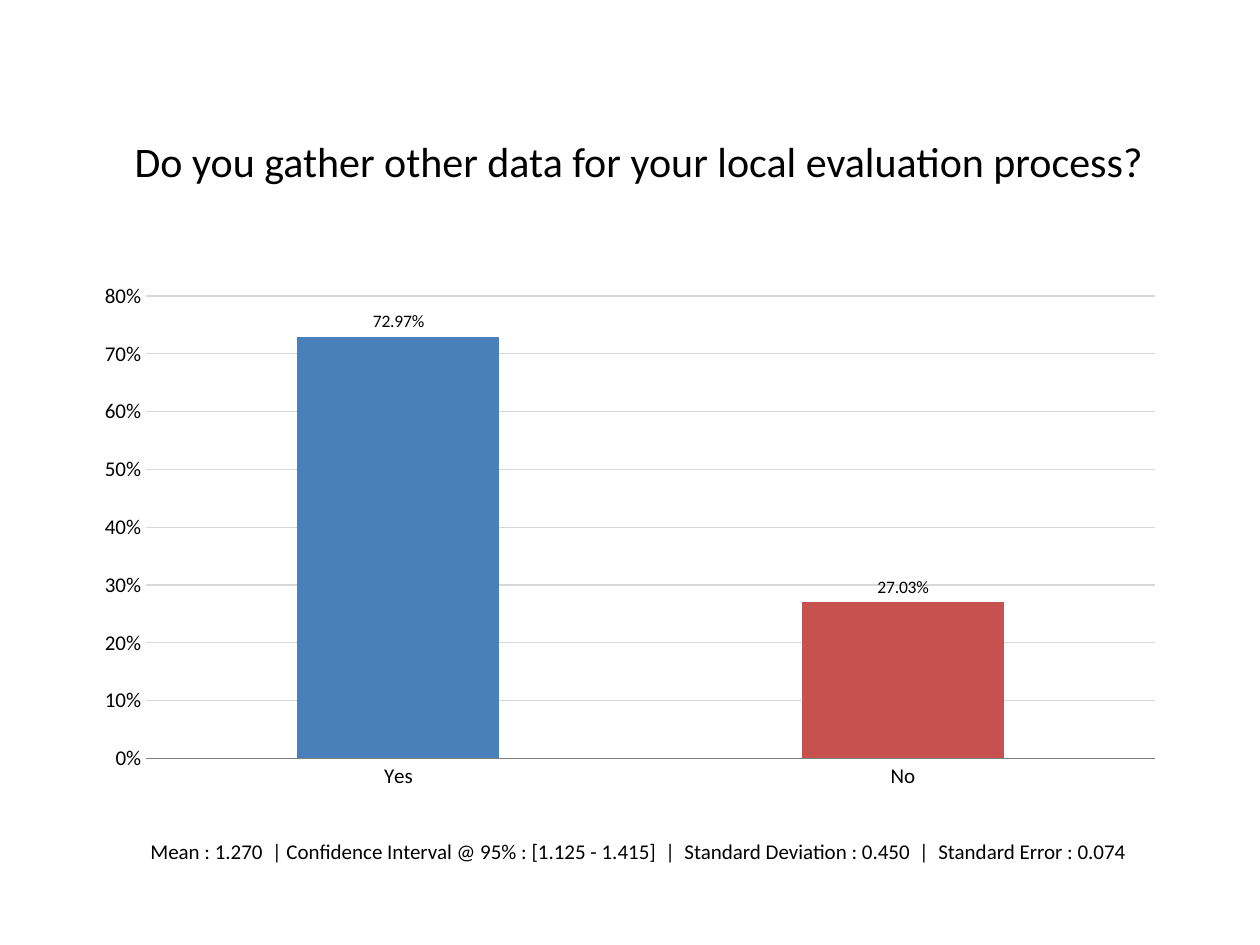
"""Build a survey result slide with a column chart and its summary statistics."""
from dataclasses import dataclass

from lxml import etree
from pptx import Presentation
from pptx import util as u
from pptx.chart.data import CategoryChartData
from pptx.dml.color import RGBColor
from pptx.enum import chart as charts
from pptx.enum import shapes, text
from pptx.oxml import ns

PIXEL = 9144
FONT = "Calibri"
COLORS = {
    "text": "000000",
    "background": "FFFFFF",
    "grid": "D8D8D8",
    "axis": "808080",
    "yes": "4980BA",
    "no": "C6514E",
}


@dataclass(frozen=True)
class Box:
    left: int
    top: int
    width: int
    height: int

    def lengths(self) -> list[int]:
        return [px(n) for n in (self.left, self.top, self.width, self.height)]


@dataclass(frozen=True)
class Answer:
    label: str
    share: float
    color: str


TITLE_BOX = Box(73, 58, 868, 139)
CHART_BOX = Box(66, 217, 868, 417)
PLOT_BOX = Box(116, 235, 801, 367)
STATISTICS_BOX = Box(73, 606, 868, 139)
ANSWERS = [Answer("Yes", 0.7297, "yes"), Answer("No", 0.2703, "no")]


def px(length: int) -> int:
    return u.Emu(length * PIXEL)


def rgb(name: str) -> RGBColor:
    return RGBColor.from_string(COLORS[name])


def format_font(font, size: int, color: str = "text") -> None:
    font.name = FONT
    font.size = u.Pt(size)
    font.bold = False
    font.color.rgb = rgb(color)


def write_text(shape, wording: str, *, box: Box, size: int, color: str = "text") -> None:
    shape.left, shape.top, shape.width, shape.height = box.lengths()
    shape.fill.background()
    shape.line.fill.background()
    frame = shape.text_frame
    frame.word_wrap = True
    frame.auto_size = text.MSO_AUTO_SIZE.NONE
    frame.vertical_anchor = text.MSO_ANCHOR.MIDDLE
    paragraph = frame.paragraphs[0]
    paragraph.alignment = text.PP_ALIGN.CENTER
    run = paragraph.add_run()
    run.text = wording
    format_font(run.font, size, color)


def round_corners(placeholder) -> None:
    geometry = etree.Element(ns.qn("a:prstGeom"), prst="roundRect")
    etree.SubElement(geometry, ns.qn("a:avLst"))
    placeholder._element.spPr.find(ns.qn("a:xfrm")).addnext(geometry)


def format_line(line, color: str) -> None:
    line.color.rgb = rgb(color)
    line.width = u.Pt(0.75)


def place_plot(chart, outer: Box, inner: Box) -> None:
    settings = {
        "layoutTarget": "inner",
        "xMode": "edge",
        "yMode": "edge",
        "x": (inner.left - outer.left) / outer.width,
        "y": (inner.top - outer.top) / outer.height,
        "w": inner.width / outer.width,
        "h": inner.height / outer.height,
    }
    plot_area = chart._chartSpace.chart.plotArea
    for layout in plot_area.findall(ns.qn("c:layout")):
        plot_area.remove(layout)
    layout = etree.Element(ns.qn("c:layout"))
    manual = etree.SubElement(layout, ns.qn("c:manualLayout"))
    for tag, value in settings.items():
        etree.SubElement(manual, ns.qn(f"c:{tag}")).set("val", str(value))
    plot_area.insert(0, layout)


def format_axes(chart) -> None:
    for axis in (chart.category_axis, chart.value_axis):
        axis.major_tick_mark = charts.XL_TICK_MARK.NONE
        axis.minor_tick_mark = charts.XL_TICK_MARK.NONE
        format_font(axis.tick_labels.font, 12)
    format_line(chart.category_axis.format.line, "axis")
    values = chart.value_axis
    values.minimum_scale, values.maximum_scale, values.major_unit = 0, 0.8, 0.1
    values.tick_labels.number_format = "0%"
    values.tick_labels.number_format_is_linked = False
    values.format.line.fill.background()
    format_line(values.major_gridlines.format.line, "grid")


def add_answer_chart(slide, answers: list[Answer], box: Box, plot_box: Box) -> None:
    data = CategoryChartData(number_format="0.00%")
    data.categories = [answer.label for answer in answers]
    data.add_series("Series 1", [answer.share for answer in answers])
    chart = slide.shapes.add_chart(
        charts.XL_CHART_TYPE.COLUMN_CLUSTERED, *box.lengths(), data
    ).chart
    chart.has_legend = False
    chart.has_title = False
    format_font(chart.font, 18)
    format_axes(chart)
    place_plot(chart, box, plot_box)

    plot = chart.plots[0]
    plot.gap_width = 150
    plot.vary_by_categories = False
    series = plot.series[0]
    for index, answer in enumerate(answers):
        fill = series.points[index].format.fill
        fill.solid()
        fill.fore_color.rgb = rgb(answer.color)
    labels = series.data_labels
    labels.show_value = True
    labels.number_format = "0.00%"
    labels.number_format_is_linked = False
    labels.position = charts.XL_LABEL_POSITION.OUTSIDE_END
    format_font(labels.font, 10)


def main() -> None:
    presentation = Presentation()
    presentation.slide_width, presentation.slide_height = px(1000), px(750)
    slide = presentation.slides.add_slide(presentation.slide_layouts[5])
    slide.background.fill.solid()
    slide.background.fill.fore_color.rgb = rgb("background")
    title = slide.shapes.title
    write_text(
        title,
        "Do you gather other data for your local evaluation process?",
        box=TITLE_BOX,
        size=24,
    )
    round_corners(title)
    add_answer_chart(slide, ANSWERS, CHART_BOX, PLOT_BOX)
    statistics = slide.shapes.add_shape(
        shapes.MSO_SHAPE.ROUNDED_RECTANGLE, *STATISTICS_BOX.lengths()
    )
    statistics.shadow.inherit = False
    write_text(
        statistics,
        "Mean : 1.270  | Confidence Interval @ 95% : [1.125 - 1.415]  |  "
        "Standard Deviation : 0.450  |  Standard Error : 0.074",
        box=STATISTICS_BOX,
        size=12,
    )
    presentation.save("out.pptx")


if __name__ == "__main__":
    main()
